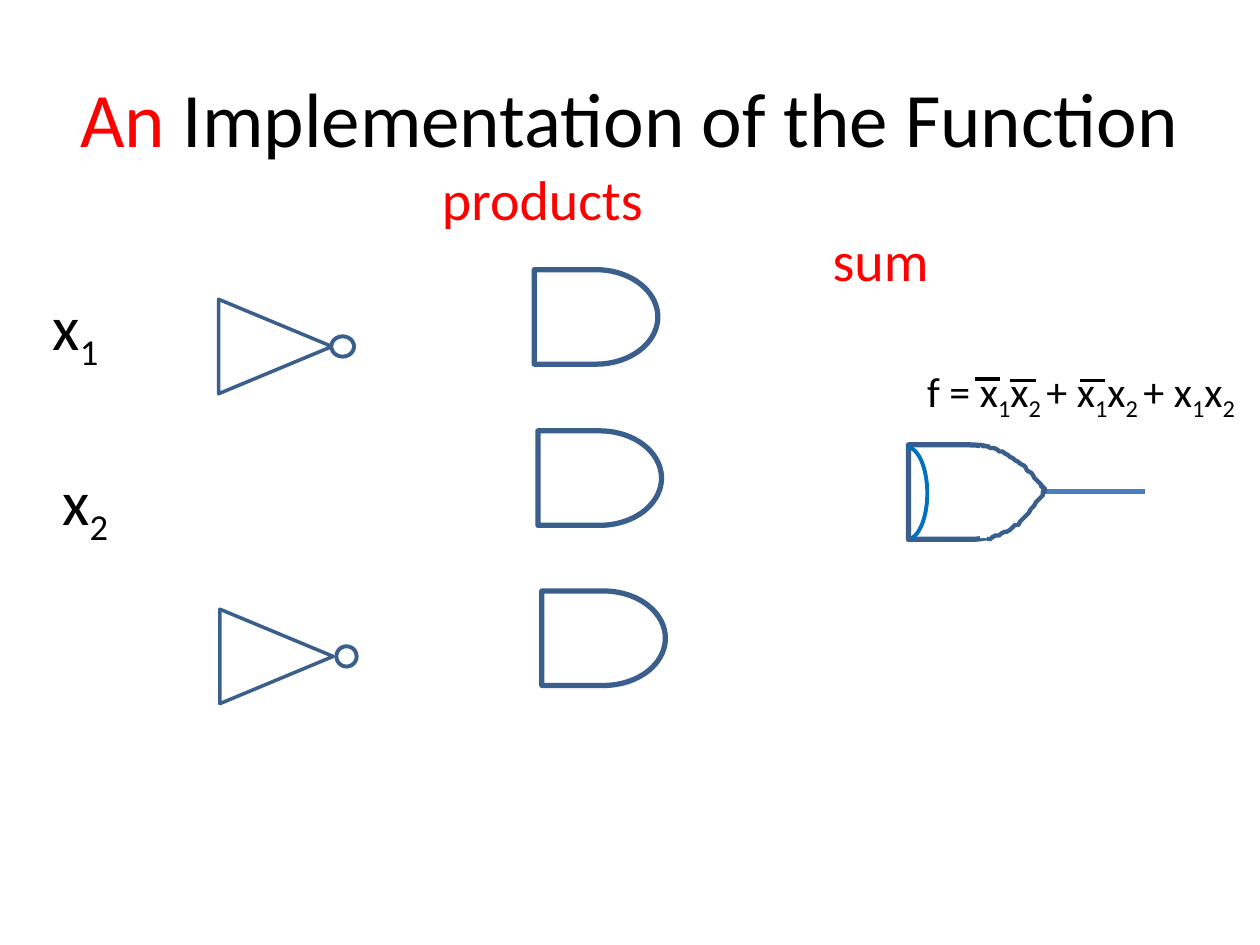
import pptx
import pptx.util
import pptx.dml.color
import pptx.enum.shapes
import pptx.enum.text
import pptx.oxml
import pptx.oxml.ns

Pt = pptx.util.Pt
RGBColor = pptx.dml.color.RGBColor
MSO_SHAPE = pptx.enum.shapes.MSO_SHAPE

BLACK = RGBColor(0x00, 0x00, 0x00)
WHITE = RGBColor(0xFF, 0xFF, 0xFF)
RED = RGBColor(0xFF, 0x00, 0x00)
GATE = RGBColor(0x3A, 0x5F, 0x8C)
WIRE = RGBColor(0x4B, 0x7E, 0xBC)
ARC = RGBColor(0x00, 0x70, 0xC0)

GATE_W, GATE_H = 70.6, 54
SUBSCRIPT = "-25000"


def style(sp, line=None, width=0, fill=None):
    sp.shadow.inherit = False
    if fill is None:
        sp.fill.background()
    else:
        sp.fill.solid()
        sp.fill.fore_color.rgb = fill
    if line is None:
        sp.line.fill.background()
    else:
        sp.line.color.rgb = line
        sp.line.width = Pt(width)


def add_shape(s, kind, x, y, w, h, **look):
    sp = s.shapes.add_shape(kind, Pt(x), Pt(y), Pt(w), Pt(h))
    style(sp, **look)
    return sp


def add_line(s, x1, x2, y, color, width):
    line = s.shapes.add_connector(
        pptx.enum.shapes.MSO_CONNECTOR.STRAIGHT, Pt(x1), Pt(y), Pt(x2), Pt(y))
    line.line.color.rgb = color
    line.line.width = Pt(width)
    props = line._element.spPr
    props.append(pptx.oxml.parse_xml(
        f"<a:effectLst {pptx.oxml.ns.nsdecls('a')}/>"))


def add_text(s, x, y, w, h, parts, size, color=BLACK, subscripts=True):
    """Every second part is a subscript unless subscripts is False."""
    tf = s.shapes.add_textbox(Pt(x), Pt(y), Pt(w), Pt(h)).text_frame
    tf.word_wrap = True
    p = tf.paragraphs[0]
    for i, part in enumerate(parts):
        r = p.add_run()
        r.text = part
        r.font.name = "Calibri"
        r.font.size = Pt(size)
        r.font.color.rgb = color
        if subscripts and i % 2:
            r._r.get_or_add_rPr().set("baseline", SUBSCRIPT)
    return tf


def bezier(p0, p1, p2, p3, steps=12):
    for i in range(1, steps + 1):
        t = i / steps
        u = 1 - t
        yield tuple(u**3 * a + 3 * u * u * t * b + 3 * u * t * t * c + t**3 * d
                    for a, b, c, d in zip(p0, p1, p2, p3))


def add_curve(s, x, y, points):
    """Draw chained Bezier segments; points are relative to x, y."""
    points = [(x + dx, y + dy) for dx, dy in points]
    path_points = []
    for i in range(0, len(points) - 1, 3):
        path_points += bezier(*points[i:i + 4])
    fb = s.shapes.build_freeform(*points[0], scale=Pt(1))
    fb.add_line_segments(path_points, close=False)
    style(fb.convert_to_shape(), line=GATE, width=2.5)


def add_title(s, x, y, w, h):
    tf = add_text(s, x, y, w, h, ["An", " Implementation of the Function"],
                  44, subscripts=False)
    tf.vertical_anchor = pptx.enum.text.MSO_ANCHOR.MIDDLE
    p = tf.paragraphs[0]
    p.alignment = pptx.enum.text.PP_ALIGN.CENTER
    p.runs[0].font.color.rgb = RED


def add_input(s, x, y, index):
    tf = add_text(s, x, y, 65, 42, ["x", index], 36)
    tf.margin_left = Pt(23.5)


def add_inverter(s, x, y, bubble_x, bubble_w):
    # Triangle is turned a quarter, so its frame is upright about the centre
    w, h, bubble_h = 64.8, 54, 11.6
    tri = add_shape(s, MSO_SHAPE.ISOSCELES_TRIANGLE, x + (w - h) / 2,
                    y + (h - w) / 2, h, w, line=GATE, width=2)
    tri.rotation = 90
    add_shape(s, MSO_SHAPE.OVAL, x + bubble_x, y + (h - bubble_h) / 2,
              bubble_w, bubble_h, line=GATE, width=2.25, fill=WHITE)


def add_and_gate(s, x, y):
    add_shape(s, MSO_SHAPE.FLOWCHART_DELAY, x, y, GATE_W, GATE_H,
              line=GATE, width=3)


def add_or_gate(s, x, y):
    # Output wire
    add_line(s, x + 77, x + 135.4, y + 26.6, WIRE, 2.5)
    # Body with a curved input side
    add_and_gate(s, x, y)
    arc = add_shape(s, MSO_SHAPE.ARC, x - 12.2, y + 1.4, 23, 52.6,
                    line=ARC, width=2.25)
    arc.adjustments[0] = 162
    arc.adjustments[1] = 50.54
    # Pointed nose over the round end
    add_shape(s, MSO_SHAPE.RECTANGLE, x + 41, y, 32.4, 53.3, fill=WHITE)
    add_curve(s, x, y, [(41, 0), (49.7, 2.2), (55.4, 4.3), (61.2, 8.6),
                        (67, 12.2), (72.7, 19.4), (75.6, 23),
                        (78.5, 25.9), (77.8, 26.6), (77.8, 26.6)])
    add_curve(s, x, y, [(44.6, 54), (52.6, 51.8), (57.6, 49), (62.6, 45.4),
                        (67.7, 41), (72.7, 33.1), (75.6, 30.2),
                        (77.8, 26.6), (77.8, 25.9), (77.8, 25.9)])


def add_formula(s, x, y):
    add_text(s, x, y, 208, 64,
             ["f = x", "1", "x", "2 ", "+ x", "1", "x", "2 ",
              "+ x", "1", "x", "2"], 24)
    # Bars over the complemented inputs
    for dx, dy in ((34.6, 11.5), (54.7, 12.2), (94.3, 12.2)):
        add_line(s, x + dx, x + dx + 14.4, y + dy, BLACK, 2)


def main():
    prs = pptx.Presentation()
    prs.slide_width, prs.slide_height = Pt(720), Pt(540)
    s = prs.slides.add_slide(prs.slide_layouts[6])

    add_title(s, 36, 21.6, 648, 90)
    add_or_gate(s, 519.1, 254.2)
    for x, y in ((305.3, 154.1), (307.4, 246.2), (309.6, 337.7)):
        add_and_gate(s, x, y)
    add_input(s, 6.5, 160.6, "1")
    add_input(s, 12.2, 260.6, "2")
    add_inverter(s, 124.9, 171, 64.4, 13)
    add_inverter(s, 125.6, 348.1, 66.6, 11.6)
    add_formula(s, 522.7, 205.2)
    for x, y, label in ((245.5, 90.7, "products"), (468.7, 125.3, "sum")):
        add_text(s, x, y, 147, 64, [label], 32, RED)

    prs.save("out.pptx")


if __name__ == "__main__":
    main()
